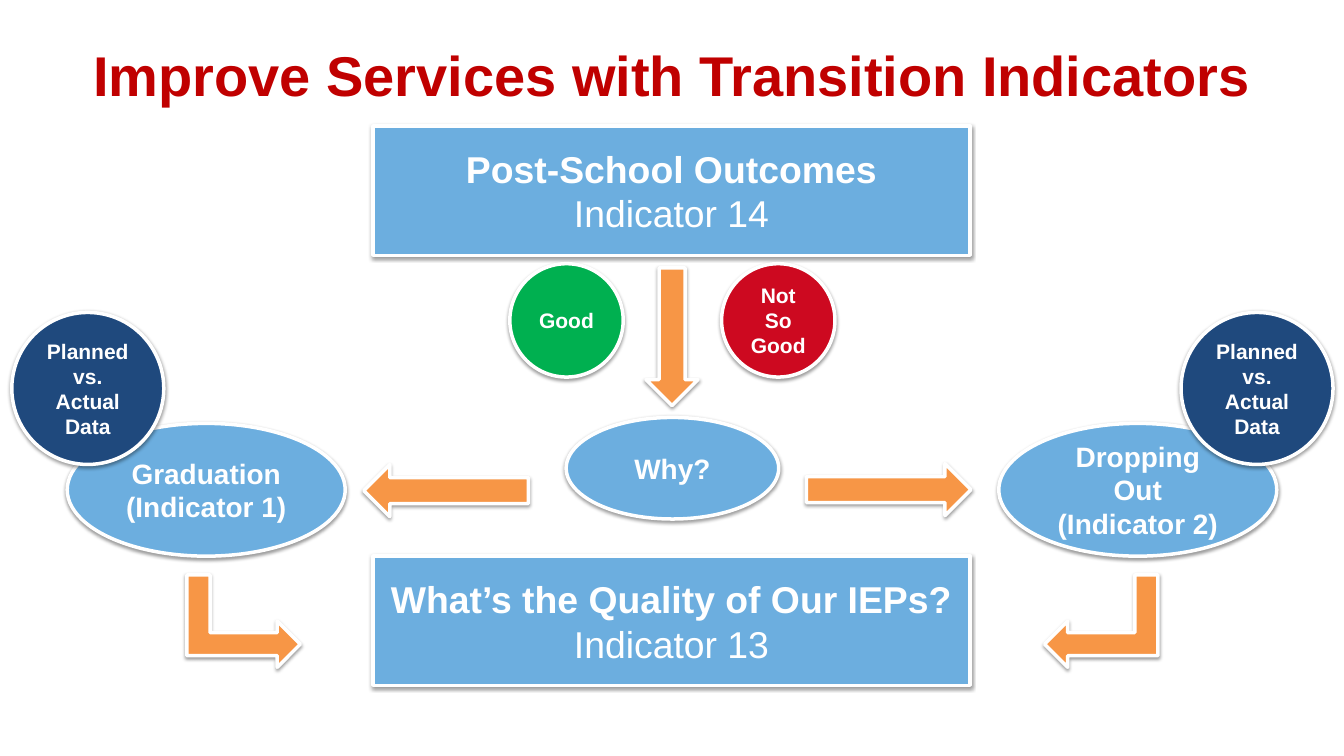
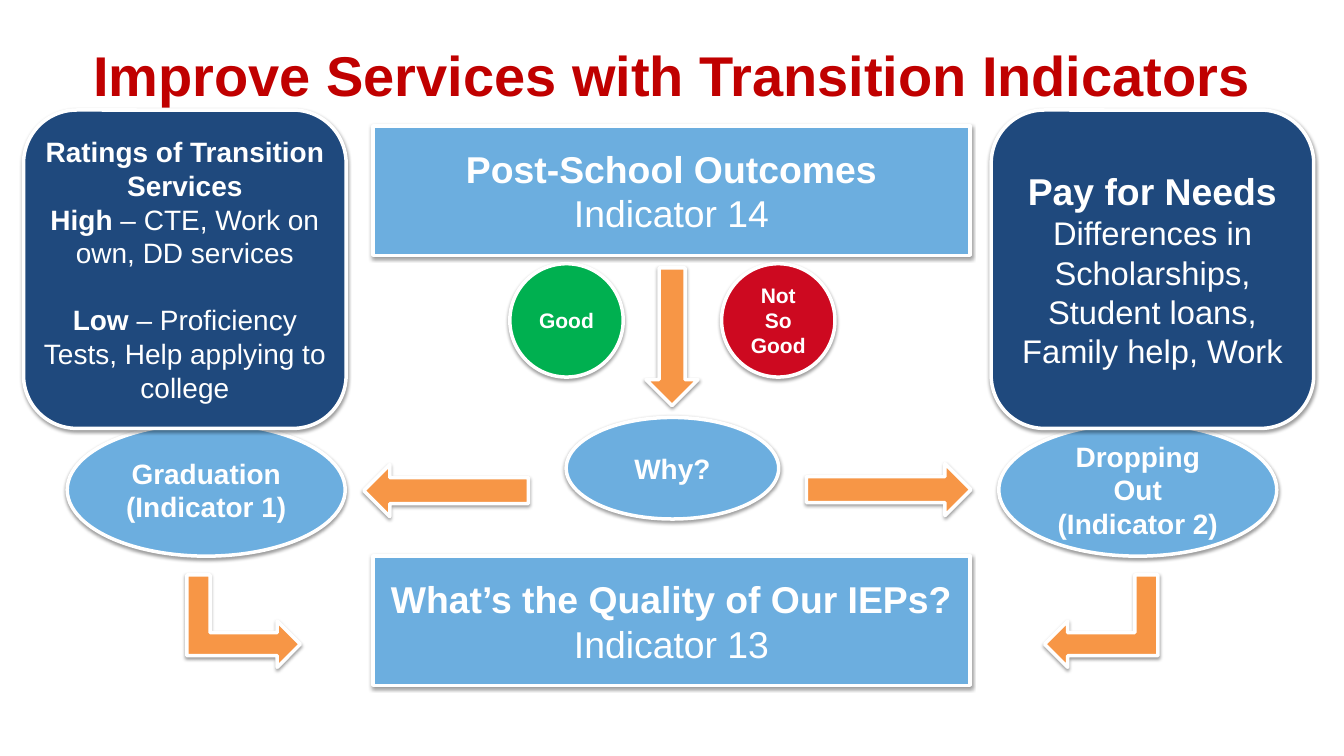
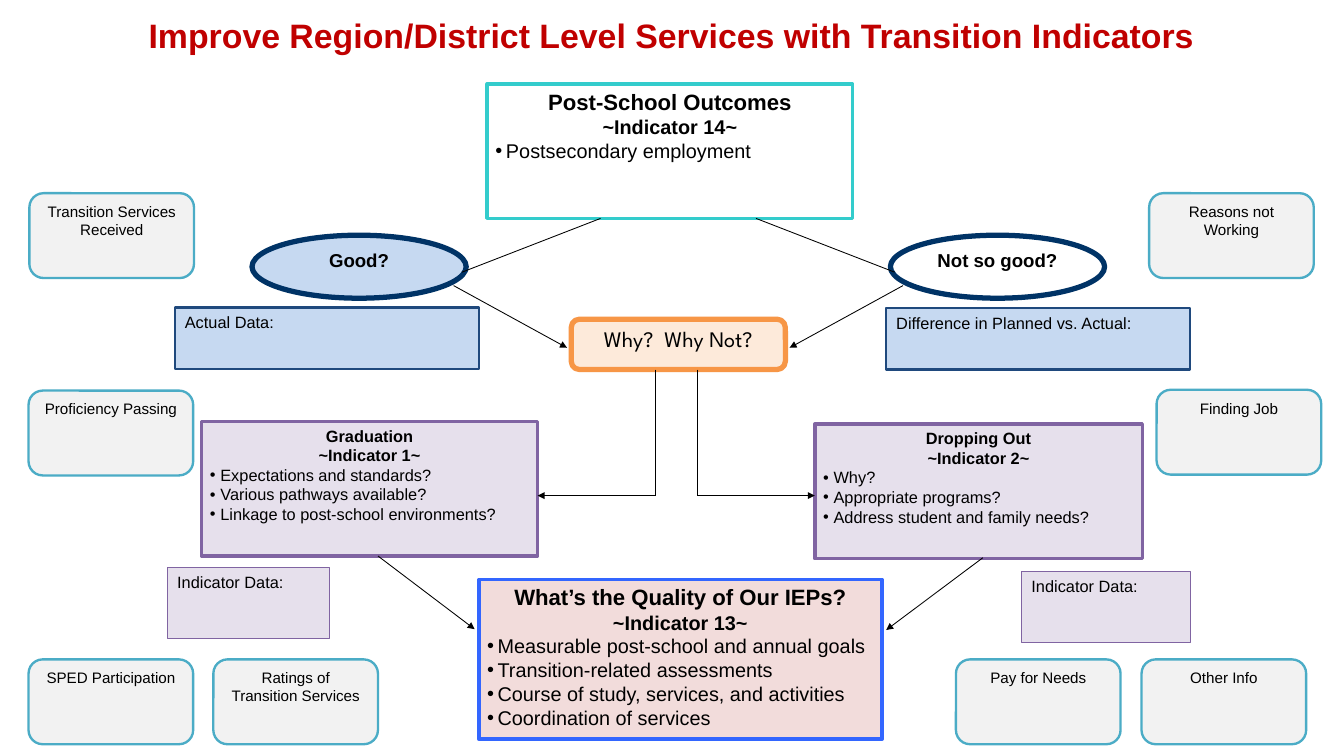
from lxml import etree
from pptx import Presentation
from pptx.dml.color import RGBColor
from pptx.enum.shapes import MSO_CONNECTOR as Connector, MSO_SHAPE as Shape
from pptx.enum.text import MSO_ANCHOR as Anchor, PP_ALIGN as Align
from pptx.oxml.ns import qn
from pptx.util import Pt

FONT = "Arial"
WHITE, BLACK, TITLE_RED = "FFFFFF", "000000", "C00000"
SKY, NAVY, ORANGE = "6CAEDF", "1F497D", "F79646"
GREEN, RED = "00B050", "CD0920"
PALE_BLUE, LILAC, PURPLE = "C6D9F1", "E6E0EC", "8064A2"
PALE_GREY, TEAL, DARK_BLUE = "F2F2F2", "4BACC6", "003366"

# A paragraph is a list of runs; a run is (text, size, bold).
FLOW_TITLE = "Improve Services with Transition Indicators"
BANNERS = [
    (108, "Post-School Outcomes", "Indicator 14"),
    (476.6, "What’s the Quality of Our IEPs?", "Indicator 13"),
]
# shape, place, fill, size, lines
BUBBLES = [
    ((57.6, 362.9, 238.3, 113.8), SKY, 24, ["Graduation", "(Indicator 1)"]),
    ((856.1, 362.9, 238.3, 113.8), SKY, 24, ["Dropping Out", "(Indicator 2)"]),
    ((437, 226, 97.2, 97.2), GREEN, 18, ["Good"]),
    ((618.5, 226, 97.2, 97.2), RED, 18, ["Not So Good"]),
    ((485.3, 357.8, 182.2, 87.1), SKY, 24, ["Why?"]),
]
# shape, place before turning, rotation, flipped
ARROWS = [
    (Shape.RIGHT_ARROW, (691.2, 397.4, 141.1, 44.6), 0, False),
    (Shape.RIGHT_ARROW, (311.8, 398.2, 141.1, 44.6), 180, False),
    (Shape.BENT_UP_ARROW, (904.3, 483.8, 79.2, 97.2), 270, True),
    (Shape.BENT_UP_ARROW, (169.2, 483.8, 79.2, 97.2), 90, False),
    (Shape.RIGHT_ARROW, (517, 266.4, 118, 44.6), 90, False),
]
DATA_BUBBLES = [
    ((left, 267.8, 130.3, 130.3), NAVY, 18, ["Planned vs. Actual Data"])
    for left in (10.1, 1012.3)
]
# left, paragraphs, space before each paragraph
PANELS = [
    (20.2, [
        [("Ratings of Transition Services", 24, True)],
        [("High", 24, True), (" – CTE, Work on own, DD services", 24, False)],
        [("Low", 24, True),
         (" – Proficiency Tests, Help applying to college", 24, False)],
    ], (0, 0, 28.8)),
    (849.6, [
        [("Pay for Needs", 32, True)],
        [("Differences in Scholarships, Student loans, Family help, Work",
          28, False)],
    ], (0, 0)),
]

DISTRICT_TITLE = ("Improve Region/District Level Services "
                  "with Transition Indicators")
# place, fill, line, heading, heading size, indicator, body size, bullets
INDICATORS = [
    ((417.6, 72, 313.2, 115.2), WHITE, "33CCCC",
     "Post-School Outcomes", 19, "~Indicator 14~", 17,
     ["Postsecondary employment"]),
    ((698.4, 363.6, 280.8, 115.2), LILAC, PURPLE,
     "Dropping Out", 14, "~Indicator 2~", 14,
     ["Why?", "Appropriate programs?", "Address student and family needs?"]),
    ((172.8, 361.4, 288, 115.2), LILAC, PURPLE,
     "Graduation", 14, "~Indicator 1~", 14,
     ["Expectations and standards?", "Various pathways available?",
      "Linkage to post-school environments?"]),
    ((410.4, 496.8, 345.6, 136.8), "F2DCDB", "3366FF",
     "What’s the Quality of Our IEPs?", 19, "~Indicator 13~", 17,
     ["Measurable post-school and annual goals",
      "Transition-related assessments",
      "Course of study, services, and activities",
      "Coordination of services"]),
]
ANSWERS = [(216, PALE_BLUE, "Good?"), (763.2, WHITE, "Not so good?")]
# from, to, arrowhead
LINKS = [
    ((648, 187.2), (766.8, 233.3), False),
    ((514.8, 187.2), (396, 233.3), False),
    ((774, 244.8), (676.8, 298.1), True),
    ((388.8, 244.8), (486, 298.1), True),
    ((561.6, 316.8), (561.6, 424.8), False),
    ((561.6, 424.8), (460.8, 424.8), True),
    ((597.6, 316.8), (597.6, 424.8), False),
    ((597.6, 424.8), (698.4, 424.8), True),
    ((324, 476.6), (406.8, 539.3), True),
    ((842.4, 478.1), (759.6, 540), True),
]
# place, fill, line, line width, text
DATA_BOXES = [
    ((149.8, 263.5, 260.6, 52.6), PALE_BLUE, NAVY, 2, "Actual Data:"),
    ((759.6, 264.2, 260.6, 52.6), PALE_BLUE, NAVY, 2,
     "Difference in Planned vs. Actual:"),
    ((143.3, 486, 139, 61.2), LILAC, PURPLE, 0.75, "Indicator Data:"),
    ((875.5, 489.6, 144.7, 61.2), LILAC, PURPLE, 0.75, "Indicator Data:"),
]
# left, top, text
TOPICS = [
    (25.2, 165.6, "Transition Services Received"),
    (985, 165.6, "Reasons not Working"),
    (24.5, 334.8, "Proficiency Passing"),
    (991.4, 334.1, "Finding Job"),
    (24.5, 565.2, "SPED Participation"),
    (182.9, 565.2, "Ratings of Transition Services"),
    (819.4, 565.2, "Pay for Needs"),
    (978.5, 565.2, "Other Info"),
]


def color(hex_string):
    return RGBColor.from_string(hex_string)


def add_runs(paragraph, runs, hex_color, font_name=FONT):
    for text, size, bold in runs:
        run = paragraph.add_run()
        run.text = text
        run.font.name = font_name
        run.font.size = Pt(size)
        run.font.bold = bold
        run.font.color.rgb = color(hex_color)


def write(shape, paragraphs, hex_color, anchor=Anchor.TOP, align=Align.CENTER,
          insets=(7.2, 3.6), gaps=None, font_name=FONT):
    """Fill the shape with paragraphs; gaps are the spaces before them."""
    frame = shape.text_frame
    frame.word_wrap = True
    frame.vertical_anchor = anchor
    frame.margin_left = frame.margin_right = Pt(insets[0])
    frame.margin_top = frame.margin_bottom = Pt(insets[1])
    for index, runs in enumerate(paragraphs):
        paragraph = frame.add_paragraph() if index else frame.paragraphs[0]
        paragraph.alignment = align
        if gaps and gaps[index]:
            paragraph.space_before = Pt(gaps[index])
        add_runs(paragraph, runs, hex_color, font_name)


def add_title(slide, text, size, top, height):
    box = slide.shapes.add_textbox(Pt(57.6), Pt(top), Pt(1036.8), Pt(height))
    write(box, [[(text, size, True)]], TITLE_RED, insets=(0, 0))


def add_box(slide, kind, place, fill, line, width):
    shape = slide.shapes.add_shape(kind, *map(Pt, place))
    shape.shadow.inherit = False
    shape.fill.solid()
    shape.fill.fore_color.rgb = color(fill)
    shape.line.color.rgb = color(line)
    shape.line.width = Pt(width)
    return shape


def add_raised_box(slide, kind, place, fill):
    """Add a white-edged shape with a soft shadow below it."""
    shape = add_box(slide, kind, place, fill, WHITE, 3)
    effects = shape.element.spPr.find(qn("a:effectLst"))
    shadow = etree.SubElement(
        effects, qn("a:outerShdw"), blurRad=str(Pt(3.1)), dist=str(Pt(1.6)),
        dir="5400000", rotWithShape="0")
    shade = etree.SubElement(shadow, qn("a:srgbClr"), val=BLACK)
    etree.SubElement(shade, qn("a:alpha"), val="38000")
    return shape


def add_bubbles(slide, bubbles):
    for place, fill, size, lines in bubbles:
        bubble = add_raised_box(slide, Shape.OVAL, place, fill)
        write(bubble, [[(line, size, True)] for line in lines], WHITE,
              Anchor.MIDDLE)


def add_flow(slide):
    """Draw the title, banners, bubbles and arrows of a flow slide."""
    add_title(slide, FLOW_TITLE, 48, 34.6, 58.3)
    for top, heading, indicator in BANNERS:
        banner = add_raised_box(slide, Shape.RECTANGLE,
                                (319.7, top, 511.9, 110.9), SKY)
        write(banner, [[(heading, 32, True)], [(indicator, 32, False)]],
              WHITE, Anchor.MIDDLE)
    add_bubbles(slide, BUBBLES)
    for kind, place, rotation, flipped in ARROWS:
        arrow = add_raised_box(slide, kind, place, ORANGE)
        arrow.rotation = rotation
        if flipped:
            arrow.element.spPr.find(qn("a:xfrm")).set("flipH", "1")


def add_panels(slide):
    for left, paragraphs, gaps in PANELS:
        panel = add_raised_box(slide, Shape.ROUNDED_RECTANGLE,
                               (left, 94.3, 276.5, 272.9), NAVY)
        write(panel, paragraphs, WHITE, Anchor.MIDDLE, insets=(0, 3.6),
              gaps=gaps)


def add_link(slide, start, end, arrowhead):
    link = slide.shapes.add_connector(Connector.STRAIGHT,
                                      *map(Pt, start + end))
    link.line.color.rgb = color(BLACK)
    link.line.width = Pt(0.75)
    if arrowhead:
        etree.SubElement(link.line._get_or_add_ln(), qn("a:tailEnd"),
                         type="triangle")
    etree.SubElement(link.element.spPr, qn("a:effectLst"))


def add_bullet(paragraph):
    properties = paragraph._p.get_or_add_pPr()
    properties.set("marL", str(Pt(9)))
    properties.set("indent", str(Pt(-9)))
    etree.SubElement(properties, qn("a:buFont"), typeface=FONT)
    etree.SubElement(properties, qn("a:buChar"), char="•")


def add_indicator(slide, place, fill, line, heading, heading_size,
                  indicator, body_size, bullets):
    box = add_box(slide, Shape.RECTANGLE, place, fill, line, 3)
    write(box, [[(heading, heading_size, True)],
                [(indicator, body_size, True)]], BLACK)
    for bullet in bullets:
        paragraph = box.text_frame.add_paragraph()
        paragraph.alignment = Align.LEFT
        add_bullet(paragraph)
        add_runs(paragraph, [(bullet, body_size, False)], BLACK)


def add_district_map(slide):
    add_title(slide, DISTRICT_TITLE, 29, 13, 60.5)
    for indicator in INDICATORS:
        add_indicator(slide, *indicator)
    for left, fill, text in ANSWERS:
        answer = add_box(slide, Shape.OVAL, (left, 201.6, 183.6, 54), fill,
                         DARK_BLUE, 4.5)
        write(answer, [[(text, 16, True)]], BLACK)
    why = add_box(slide, Shape.ROUNDED_RECTANGLE, (489.6, 273.6, 183.6, 43.2),
                  "FDEADA", ORANGE, 4.5)
    write(why, [[("Why?  Why Not?", 19, False)]], BLACK,
          font_name="League Spartan")
    for link in LINKS:
        add_link(slide, *link)
    for place, fill, line, width, text in DATA_BOXES:
        box = add_box(slide, Shape.RECTANGLE, place, fill, line, width)
        write(box, [[(text, 14, False)]], BLACK, align=Align.LEFT,
              insets=(8.6, 4.3))
    for left, top, text in TOPICS:
        topic = add_box(slide, Shape.ROUNDED_RECTANGLE,
                        (left, top, 141.1, 72.7), PALE_GREY, TEAL, 2)
        write(topic, [[(text, 13, False)]], BLACK, insets=(8.6, 4.3))


def main():
    presentation = Presentation()
    presentation.slide_width, presentation.slide_height = Pt(1152), Pt(648)
    blank = presentation.slide_layouts[6]
    planned, ratings, district = (
        presentation.slides.add_slide(blank) for _ in range(3))
    add_flow(planned)
    add_bubbles(planned, DATA_BUBBLES)
    add_flow(ratings)
    add_panels(ratings)
    add_district_map(district)
    presentation.save("out.pptx")


if __name__ == "__main__":
    main()
